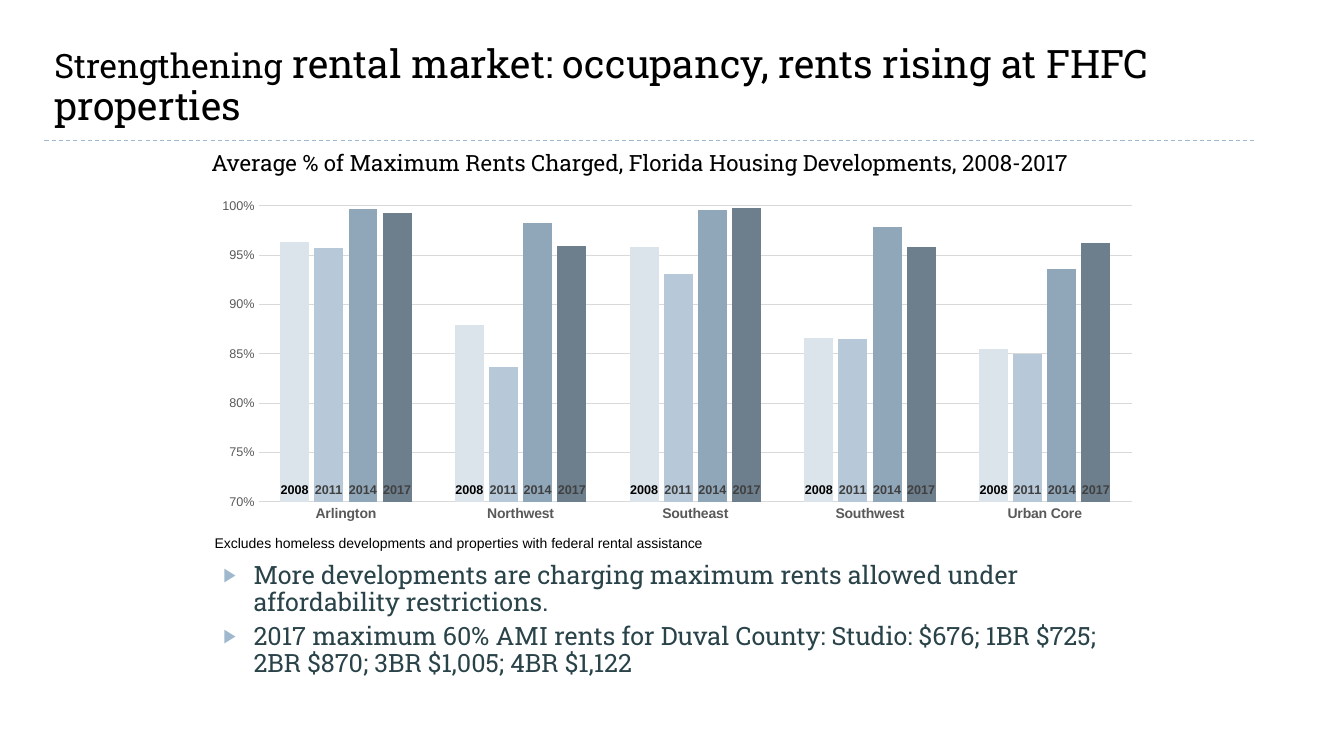
from lxml import etree
from pptx import Presentation
from pptx.chart.data import CategoryChartData
from pptx.dml.color import RGBColor
from pptx.enum.chart import XL_CHART_TYPE, XL_LABEL_POSITION, XL_TICK_MARK
from pptx.enum.dml import MSO_LINE
from pptx.enum.shapes import MSO_CONNECTOR
from pptx.enum.text import MSO_ANCHOR
from pptx.oxml.ns import qn
from pptx.util import Cm, Pt

COLUMN_CLUSTERED = XL_CHART_TYPE.COLUMN_CLUSTERED
INSIDE_BASE = XL_LABEL_POSITION.INSIDE_BASE
NO_TICK = XL_TICK_MARK.NONE
DASH = MSO_LINE.DASH
STRAIGHT = MSO_CONNECTOR.STRAIGHT
TOP = MSO_ANCHOR.TOP
BOTTOM = MSO_ANCHOR.BOTTOM

BLACK = RGBColor(0x00, 0x00, 0x00)
SLATE = RGBColor(0x29, 0x43, 0x49)
ACCENT = RGBColor(0x9F, 0xB8, 0xCD)
AXIS_TEXT = RGBColor(0x59, 0x59, 0x59)
LABEL_TEXT = RGBColor(0x40, 0x40, 0x40)
GRID = RGBColor(0xD9, 0xD9, 0xD9)

HEADING_FONT = "Roboto Slab"
BODY_FONT = "Arial"

DISTRICTS = ["Arlington", "Northwest", "Southeast", "Southwest", "Urban Core"]
RENT_SERIES = [
    ("2008", [0.963, 0.879, 0.958, 0.866, 0.855], RGBColor(0xDC, 0xE4, 0xEB), BLACK),
    ("2011", [0.957, 0.837, 0.931, 0.865, 0.85], RGBColor(0xB7, 0xC8, 0xD8), LABEL_TEXT),
    ("2014", [0.997, 0.983, 0.996, 0.979, 0.936], RGBColor(0x90, 0xA7, 0xBA), LABEL_TEXT),
    ("2017", [0.993, 0.959, 0.998, 0.958, 0.962], RGBColor(0x6D, 0x7E, 0x8D), LABEL_TEXT),
]
PLOT_LAYOUT = {
    "layoutTarget": "inner", "xMode": "edge", "yMode": "edge",
    "x": 0.06, "y": 0.04, "w": 0.92, "h": 0.88,
}


def set_attributes(target, values):
    for name, value in values.items():
        setattr(target, name, value)


class SlideBuilder:
    def __init__(self, slide):
        self.slide = slide

    def style_font(self, font, size, color, name=BODY_FONT, bold=False):
        set_attributes(font, {"size": Pt(size), "name": name, "bold": bold})
        font.color.rgb = color

    def add_rule(self, left, right, top):
        line = self.slide.shapes.add_connector(
            STRAIGHT, Cm(left), Cm(top), Cm(right), Cm(top))
        line.line.color.rgb = ACCENT
        set_attributes(line.line, {"width": Pt(0.75), "dash_style": DASH})
        etree.SubElement(line._element.spPr, qn("a:effectLst"))

    def add_text(self, box, paragraphs, color=BLACK, font=HEADING_FONT,
                 anchor=TOP, wrap=True, spacing=1.0, bullet=False):
        shape = self.slide.shapes.add_textbox(*map(Cm, box))
        frame = shape.text_frame
        set_attributes(frame, {"word_wrap": wrap, "vertical_anchor": anchor})
        for index, runs in enumerate(paragraphs):
            paragraph = frame.add_paragraph() if index else frame.paragraphs[0]
            set_attributes(paragraph, {
                "line_spacing": spacing, "space_before": Pt(5 if index else 0)})
            if bullet:
                self.add_bullet(paragraph)
            for text, size in runs:
                run = paragraph.add_run()
                run.text = text
                self.style_font(run.font, size, color, font)

    def add_bullet(self, paragraph):
        properties = paragraph._p.get_or_add_pPr()
        properties.set("marL", str(Cm(1.52)))
        properties.set("indent", str(-Cm(0.76)))
        bullet_color = etree.SubElement(properties, qn("a:buClr"))
        etree.SubElement(bullet_color, qn("a:srgbClr"), val=str(ACCENT))
        etree.SubElement(properties, qn("a:buSzPct"), val="76000")
        etree.SubElement(properties, qn("a:buFont"), typeface=BODY_FONT)
        etree.SubElement(properties, qn("a:buChar"), char="▶")

    def add_column_chart(self, box, categories, series_rows):
        data = CategoryChartData(number_format="0%")
        data.categories = categories
        for name, values, _, _ in series_rows:
            data.add_series(name, values)
        chart = self.slide.shapes.add_chart(
            COLUMN_CLUSTERED, *map(Cm, box), data).chart
        set_attributes(chart, {"has_legend": False, "has_title": False})
        self.style_font(chart.font, 10, BLACK)
        plot = chart.plots[0]
        set_attributes(plot, {
            "gap_width": 150, "overlap": -18, "vary_by_categories": False})
        for series, (_, _, fill, label_color) in zip(plot.series, series_rows):
            series.format.fill.solid()
            series.format.fill.fore_color.rgb = fill
            labels = series.data_labels
            set_attributes(labels, {
                "show_value": False, "show_series_name": True,
                "position": INSIDE_BASE})
            self.style_font(labels.font, 9, label_color, bold=True)
        self.style_axes(chart)
        self.set_plot_layout(chart)

    def style_axes(self, chart):
        category_axis, value_axis = chart.category_axis, chart.value_axis
        for axis, size, bold in ((category_axis, 10, True), (value_axis, 9, False)):
            set_attributes(axis, {
                "major_tick_mark": NO_TICK, "minor_tick_mark": NO_TICK})
            self.style_font(axis.tick_labels.font, size, AXIS_TEXT, bold=bold)
        set_attributes(value_axis, {
            "minimum_scale": 0.7, "maximum_scale": 1, "major_unit": 0.05,
            "has_major_gridlines": True})
        set_attributes(value_axis.tick_labels, {
            "number_format": "0%", "number_format_is_linked": False})
        value_axis.format.line.fill.background()
        for line in (category_axis.format.line, value_axis.major_gridlines.format.line):
            line.color.rgb = GRID
            line.width = Pt(0.75)

    def set_plot_layout(self, chart):
        plot_area = chart._chartSpace.chart.plotArea
        for old_layout in plot_area.findall(qn("c:layout")):
            plot_area.remove(old_layout)
        layout = etree.Element(qn("c:layout"))
        manual = etree.SubElement(layout, qn("c:manualLayout"))
        for name, value in PLOT_LAYOUT.items():
            etree.SubElement(manual, qn(f"c:{name}"), val=str(value))
        plot_area.insert(0, layout)


def main():
    presentation = Presentation()
    set_attributes(presentation, {"slide_width": Cm(33.87), "slide_height": Cm(19.05)})
    builder = SlideBuilder(presentation.slides.add_slide(presentation.slide_layouts[6]))
    builder.add_rule(1.12, 31.6, 3.53)
    builder.add_text(
        (1.12, 1.68, 30.48, 1.7),
        [[("Strengthening", 24),
          (" rental market: occupancy, rents rising at FHFC properties", 28)]],
        anchor=BOTTOM, spacing=0.9)
    builder.add_text(
        (5.08, 3.63, 23.29, 1.63),
        [[("Average % of Maximum Rents Charged, Florida Housing Developments, "
           "2008-2017", 16)]])
    builder.add_text(
        (4.62, 14.05, 23.72, 4.45),
        [[("More developments are charging maximum rents allowed under "
           "affordability restrictions.", 18)],
         [("2017 maximum 60% AMI rents for Duval County: Studio: $676; 1BR $725; "
           "2BR $870; 3BR $1,005; 4BR $1,122", 18)]],
        color=SLATE, spacing=0.9, bullet=True)
    builder.add_column_chart((5.08, 4.85, 23.93, 8.48), DISTRICTS, RENT_SERIES)
    builder.add_text(
        (5.16, 13.34, 12.9, 0.69),
        [[("Excludes homeless developments and properties with federal rental "
           "assistance", 10)]],
        font=BODY_FONT, wrap=False)
    presentation.save("out.pptx")


if __name__ == "__main__":
    main()
